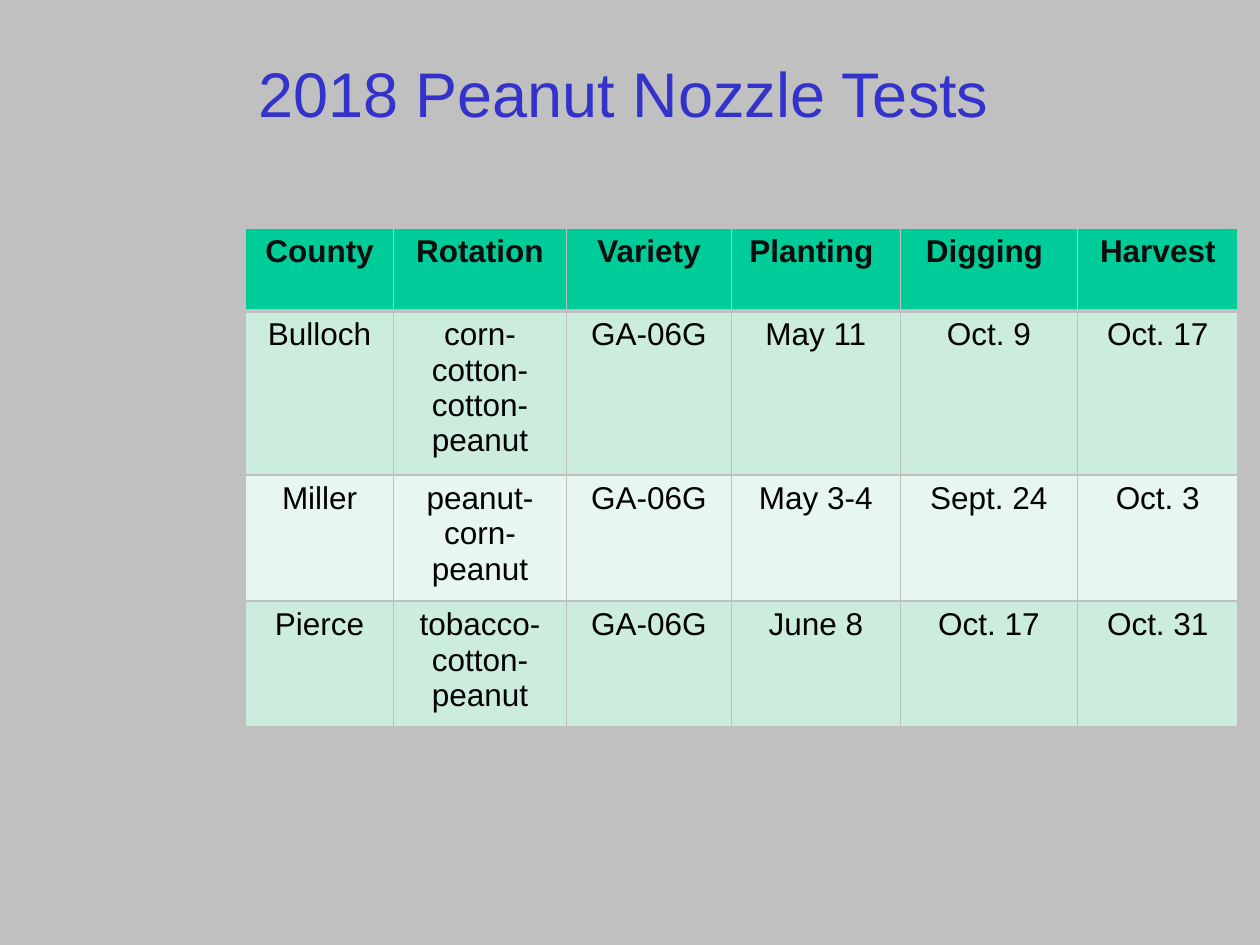
"""Build the slide listing the 2018 peanut nozzle tests by county."""
import dataclasses
import typing

import lxml.etree
import pptx
import pptx.dml.color
import pptx.enum.text
import pptx.oxml.ns
import pptx.util


@dataclasses.dataclass(frozen=True)
class Theme:
    font: str = "Arial"
    title_size: float = 36
    table_size: float = 18
    background: str = "C0C0C0"
    title: str = "3333CC"
    header_fill: str = "00CC99"
    header_text: str = "0D0D0D"
    body_text: str = "000000"
    bands: tuple[str, str] = ("CCECDE", "E7F6EF")
    thin_rule: float = 1
    header_rule: float = 3


class Column(typing.NamedTuple):
    heading: str
    width: float


class FieldTest(typing.NamedTuple):
    county: str
    rotation: str
    variety: str
    planting: str
    digging: str
    harvest: str
    height: float


THEME = Theme()
LEFT = 140.4
HEADER_HEIGHT = 47.4
COLUMNS = [
    Column("County", 84.5),
    Column("Rotation", 98.8),
    Column("Variety", 94.3),
    Column("Planting ", 96.5),
    Column("Digging ", 101.3),
    Column("Harvest", 91.8),
]
TESTS = [
    FieldTest("Bulloch", "corn-cotton-cotton-peanut", "GA-06G", "May 11", "Oct. 9", "Oct. 17", 87.8),
    FieldTest("Miller", "peanut-corn-peanut", "GA-06G", "May 3-4", "Sept. 24", "Oct. 3", 67.6),
    FieldTest("Pierce", "tobacco-cotton-peanut", "GA-06G", "June 8", "Oct. 17", "Oct. 31", 67.6),
]


def rgb(value: str) -> pptx.dml.color.RGBColor:
    return pptx.dml.color.RGBColor.from_string(value)


def style_text(paragraph, size: float, color: str, bold: bool = False) -> None:
    paragraph.font.name = THEME.font
    paragraph.font.size = pptx.util.Pt(size)
    paragraph.font.color.rgb = rgb(color)
    paragraph.font.bold = bold


def add_borders(cell, top: float, bottom: float) -> None:
    qn = pptx.oxml.ns.qn
    properties = cell._tc.get_or_add_tcPr()
    edges = {"lnL": THEME.thin_rule, "lnR": THEME.thin_rule, "lnT": top, "lnB": bottom}
    for edge, width in edges.items():
        line = lxml.etree.SubElement(properties, qn(f"a:{edge}"), w=str(pptx.util.Pt(width)))
        fill = lxml.etree.SubElement(line, qn("a:solidFill"))
        lxml.etree.SubElement(fill, qn("a:srgbClr"), val=THEME.background)


def fill_row(table, index: int, texts: typing.Sequence[str], height: float) -> None:
    is_header = index == 0
    table.rows[index].height = pptx.util.Pt(height)
    top = THEME.header_rule if index == 1 else THEME.thin_rule
    bottom = THEME.header_rule if is_header else THEME.thin_rule
    fill = THEME.header_fill if is_header else THEME.bands[(index - 1) % 2]
    color = THEME.header_text if is_header else THEME.body_text
    for cell, text in zip(table.rows[index].cells, texts):
        add_borders(cell, top, bottom)
        cell.fill.solid()
        cell.fill.fore_color.rgb = rgb(fill)
        cell.text = text
        paragraph = cell.text_frame.paragraphs[0]
        paragraph.alignment = pptx.enum.text.PP_ALIGN.CENTER
        style_text(paragraph, THEME.table_size, color, is_header)


def add_title(slide, text: str) -> None:
    Pt = pptx.util.Pt
    frame = slide.shapes.add_textbox(Pt(LEFT), Pt(8), Pt(574), Pt(90)).text_frame
    frame.word_wrap = True
    frame.vertical_anchor = pptx.enum.text.MSO_ANCHOR.MIDDLE
    frame.text = text
    style_text(frame.paragraphs[0], THEME.title_size, THEME.title)


def add_test_table(slide) -> None:
    Pt = pptx.util.Pt
    width = sum(column.width for column in COLUMNS)
    height = HEADER_HEIGHT + sum(test.height for test in TESTS)
    table = slide.shapes.add_table(
        len(TESTS) + 1, len(COLUMNS), Pt(LEFT), Pt(130.3), Pt(width), Pt(height)
    ).table
    for table_column, column in zip(table.columns, COLUMNS):
        table_column.width = Pt(column.width)
    fill_row(table, 0, [column.heading for column in COLUMNS], HEADER_HEIGHT)
    for index, test in enumerate(TESTS, start=1):
        fill_row(table, index, test[:-1], test.height)


def main() -> None:
    presentation = pptx.Presentation()
    presentation.slide_width = pptx.util.Pt(720)
    presentation.slide_height = pptx.util.Pt(540)
    slide = presentation.slides.add_slide(presentation.slide_layouts[6])
    slide.background.fill.solid()
    slide.background.fill.fore_color.rgb = rgb(THEME.background)
    add_title(slide, "2018 Peanut Nozzle Tests")
    add_test_table(slide)
    presentation.save("out.pptx")


if __name__ == "__main__":
    main()
